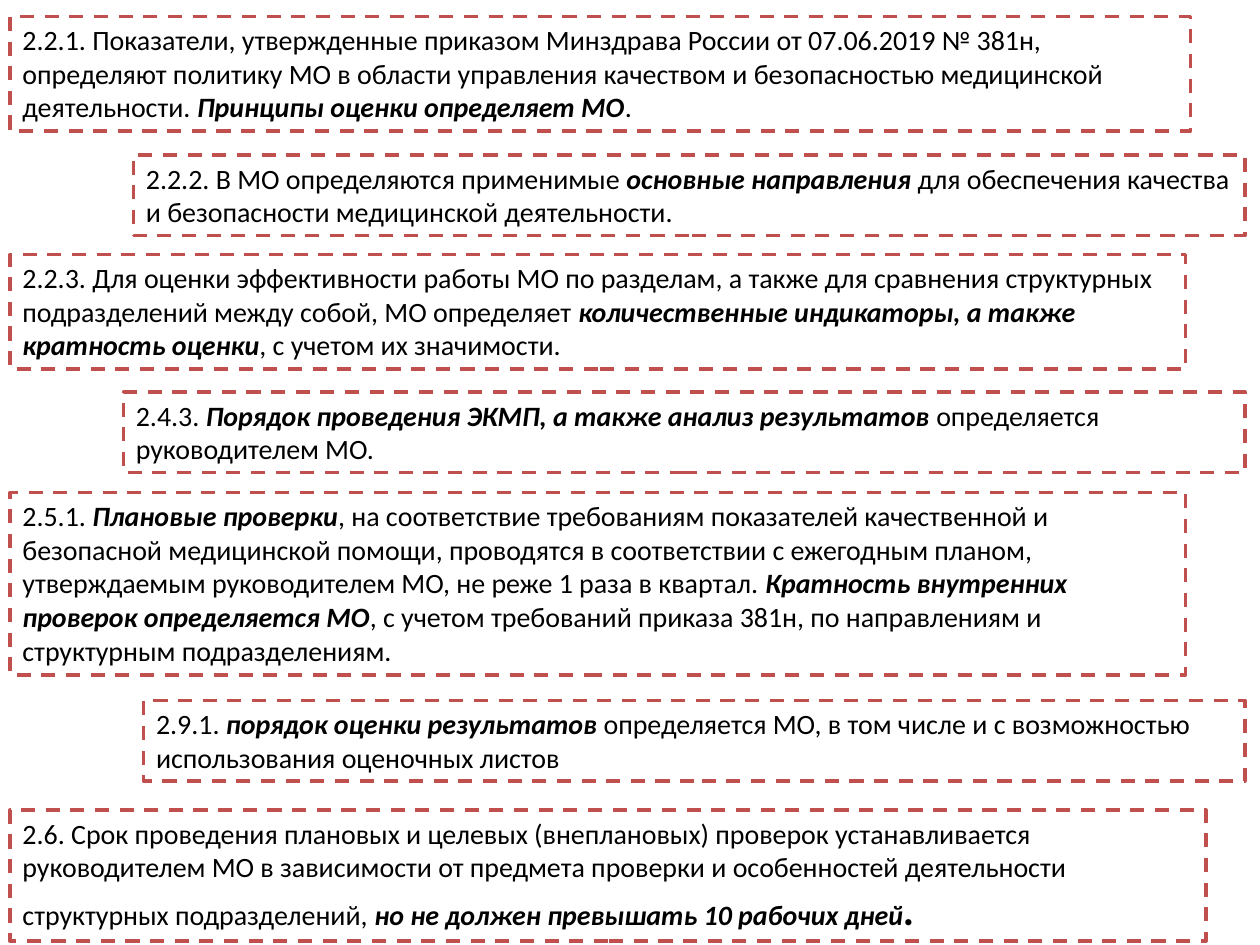
"""Builds a slide of seven staggered dashed boxes on quality control rules."""
import pptx
import pptx.util
import pptx.dml.color
import pptx.enum.dml
import pptx.enum.shapes
import pptx.enum.text

Pt = pptx.util.Pt
RGB = pptx.dml.color.RGBColor.from_string
theme = {"font": "Calibri", "ink": "000000", "edge": "C0504D",
         "body": 16, "large": 24, "line": 2}

deck = pptx.Presentation()
deck.slide_width = pptx.util.Inches(10)
deck.slide_height = pptx.util.Inches(7.5)
slide = deck.slides.add_slide(deck.slide_layouts[6])
col = deck.slide_width / 100
row = deck.slide_height / 100
near, far = 0.8, 98.8
pad, step = 1.33, 3.6


def write(para, text, size=theme["body"], strong=False):
    run = para.add_run()
    run.text = text
    font = run.font
    font.name = theme["font"]
    font.size = Pt(size)
    font.bold = font.italic = strong
    font.color.rgb = RGB(theme["ink"])


# left column, right column, top row, lines of text, text with *strong* parts
rules = [
    (near, 94.5, 1.73, 3,
     "2.2.1. Показатели, утвержденные приказом Минздрава России от 07.06.2019 № 381н, "
     "определяют политику МО в области управления качеством и безопасностью медицинской "
     "деятельности. *Принципы оценки определяет МО*."),
    (10.6, far, 16.4, 2,
     "2.2.2. В МО определяются применимые *основные направления *для обеспечения качества "
     "и безопасности медицинской деятельности."),
    (near, 94.1, 26.93, 3,
     "2.2.3. Для оценки эффективности работы МО по разделам, а также для сравнения "
     "структурных подразделений между собой, МО определяет *количественные индикаторы, "
     "а также кратность оценки*, с учетом их значимости."),
    (9.8, far, 41.47, 2,
     "2.4.3. *Порядок проведения ЭКМП, а также анализ результатов *определяется "
     "руководителем МО."),
    (near, 94.1, 52.13, 5,
     "2.5.1. *Плановые проверки*, на соответствие требованиям показателей качественной и "
     "безопасной медицинской помощи, проводятся в соответствии с ежегодным планом, "
     "утверждаемым руководителем МО, не реже 1 раза в квартал. *Кратность внутренних "
     "проверок определяется МО*, с учетом требований приказа 381н, по направлениям и "
     "структурным подразделениям."),
    (11.4, far, 74.13, 2,
     "2.9.1. *порядок оценки результатов *определяется МО, в том числе и с возможностью "
     "использования оценочных листов"),
    (near, 95.7, 85.73, 3.48,
     "2.6. Срок проведения плановых и целевых (внеплановых) проверок устанавливается "
     "руководителем МО в зависимости от предмета проверки и особенностей деятельности "
     "структурных подразделений, *но не должен превышать 10 рабочих дней"),
]

for left, right, top, lines, text in rules:
    box = slide.shapes.add_shape(
        pptx.enum.shapes.MSO_SHAPE.RECTANGLE, round(left * col), round(top * row),
        round((right - left) * col), round((pad + step * lines) * row))
    box.shadow.inherit = False
    box.fill.background()
    box.line.color.rgb = RGB(theme["edge"])
    box.line.width = Pt(theme["line"])
    box.line.dash_style = pptx.enum.dml.MSO_LINE.DASH
    frame = box.text_frame
    frame.word_wrap = True
    frame.auto_size = pptx.enum.text.MSO_AUTO_SIZE.SHAPE_TO_FIT_TEXT
    frame.vertical_anchor = pptx.enum.text.MSO_ANCHOR.TOP
    para = frame.paragraphs[0]
    para.alignment = pptx.enum.text.PP_ALIGN.LEFT
    for spot, part in enumerate(text.split("*")):
        write(para, part, strong=spot % 2 == 1)

write(para, ".", size=theme["large"], strong=True)
deck.save("out.pptx")
